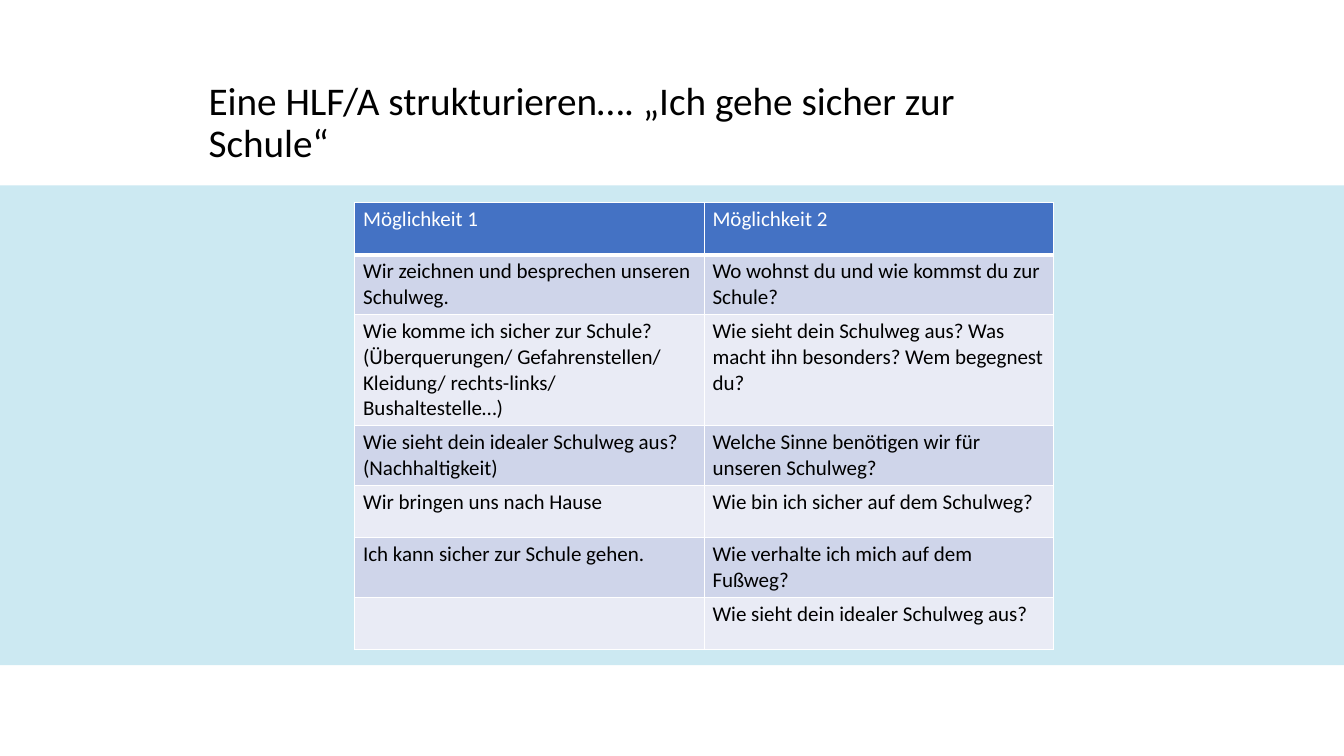
from dataclasses import dataclass

from lxml.etree import SubElement
from pptx import Presentation
from pptx.dml.color import RGBColor
from pptx.enum.shapes import MSO_SHAPE
from pptx.enum.text import MSO_ANCHOR, PP_ALIGN
from pptx.oxml.ns import qn
from pptx.slide import Slide
from pptx.table import _Cell
from pptx.text.text import TextFrame
from pptx.util import Pt

WHITE = RGBColor(0xFF, 0xFF, 0xFF)
BLACK = RGBColor(0x00, 0x00, 0x00)
BAND = RGBColor(0xCC, 0xE9, 0xF2)
HEADER = RGBColor(0x44, 0x72, 0xC4)
ROW_DARK = RGBColor(0xCF, 0xD5, 0xEA)
ROW_LIGHT = RGBColor(0xE9, 0xEB, 0xF5)
FONT = "Calibri"
SLIDE_W, SLIDE_H = 960, 540


@dataclass
class Row:
    height: float
    left: str
    right: str


ROWS = [
    Row(37.2, "Möglichkeit 1", "Möglichkeit 2"),
    Row(42, "Wir zeichnen und besprechen unseren Schulweg.",
        "Wo wohnst du und wie kommst du zur Schule?"),
    Row(78, "Wie komme ich sicher zur Schule?\n(Überquerungen/ Gefahrenstellen/ "
        "Kleidung/ rechts-links/ Bushaltestelle…)",
        "Wie sieht dein Schulweg aus? Was macht ihn besonders? Wem begegnest du?"),
    Row(42, "Wie sieht dein idealer Schulweg aus? (Nachhaltigkeit)",
        "Welche Sinne benötigen wir für unseren Schulweg?"),
    Row(37.2, "Wir bringen uns nach Hause", "Wie bin ich sicher auf dem Schulweg?"),
    Row(42, "Ich kann sicher zur Schule gehen.", "Wie verhalte ich mich auf dem Fußweg?"),
    Row(37.2, "", "Wie sieht dein idealer Schulweg aus?"),
]


def write(tf: TextFrame, text: str, *, size: float, color: RGBColor,
          spacing: float = 1.0) -> None:
    tf.word_wrap = True
    tf.text = text
    for p in tf.paragraphs:
        p.alignment = PP_ALIGN.LEFT
        p.line_spacing = spacing
        for r in p.runs:
            r.font.name = FONT
            r.font.size = Pt(size)
            r.font.color.rgb = color


def set_borders(cell: _Cell, bottom: float) -> None:
    tc_pr = cell._tc.get_or_add_tcPr()
    for side, width in (("L", 1), ("R", 1), ("T", 1), ("B", bottom)):
        ln = SubElement(tc_pr, qn(f"a:ln{side}"), w=str(Pt(width)))
        fill = SubElement(ln, qn("a:solidFill"))
        SubElement(fill, qn("a:srgbClr"), val=str(WHITE))


def add_band(slide: Slide) -> None:
    sp = slide.shapes.add_shape(MSO_SHAPE.RECTANGLE, 0, Pt(132.5), Pt(SLIDE_W), Pt(342.7))
    sp.shadow.inherit = False
    sp.fill.solid()
    sp.fill.fore_color.rgb = BAND
    sp.line.fill.background()
    # Send behind the title
    sp._element.getparent().insert(2, sp._element)


def add_title(slide: Slide, text: str) -> None:
    sp = slide.shapes.title
    sp.left, sp.top, sp.width, sp.height = Pt(141.8), Pt(31.7), Pt(591), Pt(113)
    sp.text_frame.vertical_anchor = MSO_ANCHOR.MIDDLE
    write(sp.text_frame, text, size=28, color=BLACK, spacing=0.9)


def add_lesson_table(slide: Slide, rows: list[Row]) -> None:
    frame = slide.shapes.add_table(len(rows), 2, Pt(253.4), Pt(144.7), Pt(499.2),
                                   Pt(sum(row.height for row in rows)))
    table = frame.table
    for i, row in enumerate(rows):
        table.rows[i].height = Pt(row.height)
        header = i == 0
        fill = HEADER if header else ROW_DARK if i % 2 else ROW_LIGHT
        for j, text in enumerate((row.left, row.right)):
            cell = table.cell(i, j)
            cell.margin_left = cell.margin_right = Pt(6)
            cell.margin_top = cell.margin_bottom = Pt(3)
            set_borders(cell, bottom=3 if header else 1)
            cell.fill.solid()
            cell.fill.fore_color.rgb = fill
            if text:
                write(cell.text_frame, text, size=15, color=WHITE if header else BLACK)


def main() -> None:
    prs = Presentation()
    prs.slide_width, prs.slide_height = Pt(SLIDE_W), Pt(SLIDE_H)
    slide = prs.slides.add_slide(prs.slide_layouts[5])

    # Background band and title
    add_band(slide)
    add_title(slide, "Eine HLF/A strukturieren…. „Ich gehe sicher zur Schule“")

    # Two ways to structure the lesson
    add_lesson_table(slide, ROWS)

    prs.save("out.pptx")


if __name__ == "__main__":
    main()
